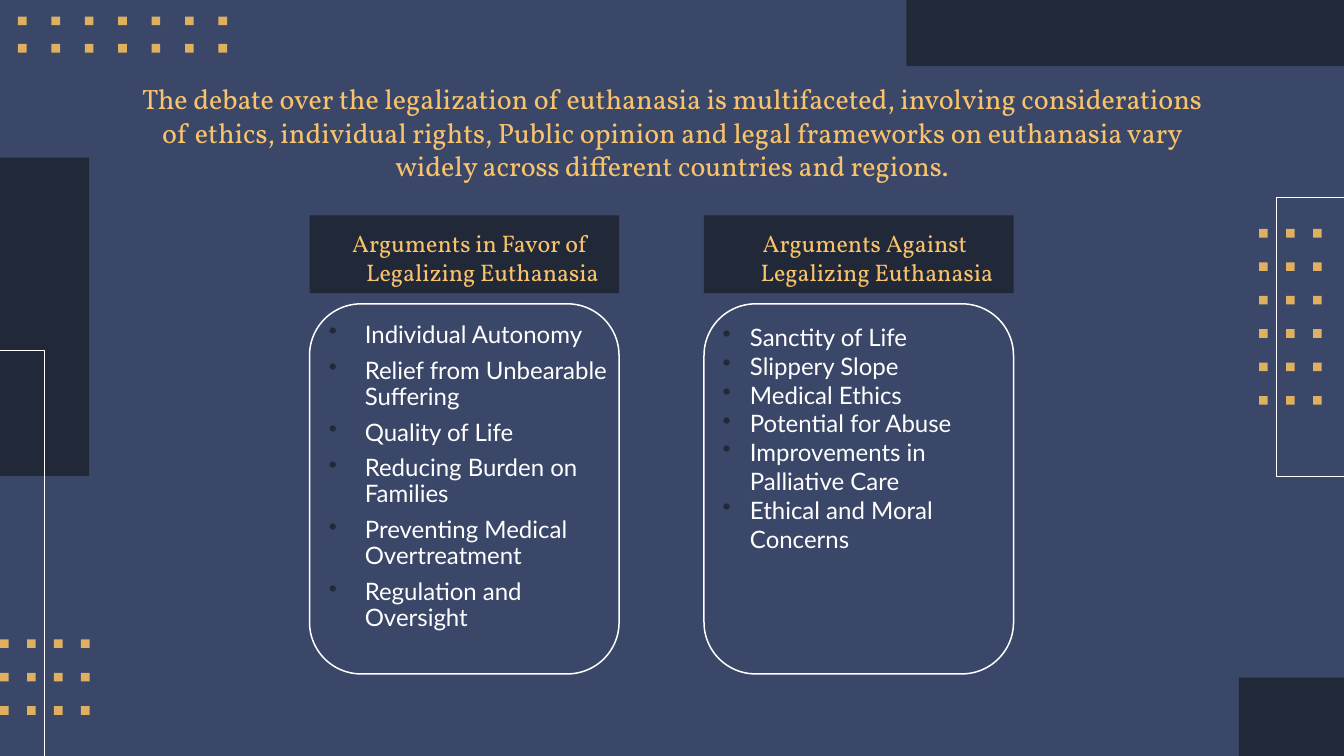
"""Build the slide that sets out arguments for and against legalizing euthanasia."""
from lxml import etree
from pptx import Presentation
from pptx import util as u
from pptx.dml.color import RGBColor
from pptx.enum import shapes, text
from pptx.oxml.ns import qn

TITLE = ("The debate over the legalization of euthanasia is multifaceted, involving "
         "considerations of ethics, individual rights, Public opinion and legal frameworks "
         "on euthanasia vary widely across different countries and regions.")
COLUMNS = [
    {"heading": "Arguments in Favor of Legalizing Euthanasia",
     "points": ["Individual Autonomy", "Relief from Unbearable Suffering", "Quality of Life",
                "Reducing Burden on Families", "Preventing Medical Overtreatment",
                "Regulation and Oversight"],
     "indent": (0.67, -0.5), "height": 4.82,
     "spacing": {"line_spacing": 0.9, "space_after": u.Pt(10)}},
    {"heading": "Arguments Against Legalizing Euthanasia",
     "points": ["Sanctity of Life", "Slippery Slope", "Medical Ethics", "Potential for Abuse",
                "Improvements in Palliative Care", "Ethical and Moral Concerns"],
     "indent": (0.54, -0.38), "height": 3.39, "spacing": {}},
]
THEME = {"back": "3A4769", "dark": "212838", "dot": "DFB05F", "gold": "F8C36A",
         "white": "FFFFFF", "serif": "Vollkorn", "sans": "Lato", "title": 28, "body": 24}

WIDTH, HEIGHT = 18.67, 10.5
PANELS = [(17.21, 9.41, 1.46, 1.09), (12.59, 0, 6.08, 0.92), (0, 2.19, 1.24, 4.42)]
OUTLINES = [[(WIDTH, 2.74), (17.73, 2.74), (17.73, 6.62), (WIDTH, 6.62)],
            [(0.62, HEIGHT), (0.62, 4.87), (0, 4.87)]]
DOT, WIDE, NARROW = 0.12, 0.464, 0.375
DOT_GRIDS = [
    {"at": (0.25, 0.23), "count": (7, 2), "step": (WIDE, 0.38)},
    {"at": (17.49, 3.18), "count": (3, 6), "step": (NARROW, WIDE)},
    {"at": (0, 8.88), "count": (4, 3), "step": (NARROW, WIDE)},
]
COLUMN_LEFT, COLUMN_STEP, COLUMN_WIDTH = 4.3, 5.48, 4.3


def color(name):
    return RGBColor.from_string(THEME[name])


def lengths(values):
    return [u.Inches(value) for value in values]


def apply(target, values):
    for name, value in values.items():
        setattr(target, name, value)


def style(shape, fill=None, line=None, weight=0.75):
    shape.shadow.inherit = False
    for part, name in ((shape.fill, fill), (shape.line.fill, line)):
        if name:
            part.solid()
            part.fore_color.rgb = color(name)
        else:
            part.background()
    if line:
        shape.line.width = u.Pt(weight)


def add_block(page, kind, frame, **look):
    shape = page.shapes.add_shape(kind, *lengths(frame))
    style(shape, **look)
    return shape


def add_outline(page, points):
    corners = [lengths(point) for point in points]
    builder = page.shapes.build_freeform(*corners[0])
    builder.add_line_segments(corners[1:], close=False)
    style(builder.convert_to_shape(), line="white")


def add_dots(page, grid):
    (left, top), (across, down), (dx, dy) = grid["at"], grid["count"], grid["step"]
    for row in range(down):
        for column in range(across):
            add_block(page, shapes.MSO_SHAPE.RECTANGLE,
                      (left + column * dx, top + row * dy, DOT, DOT), fill="dot")


def add_bullet(para):
    props = para._p.get_or_add_pPr()
    tint = etree.SubElement(props, qn("a:buClr"))
    etree.SubElement(tint, qn("a:srgbClr"), val=THEME["dark"])
    etree.SubElement(props, qn("a:buChar"), char="•")


def write(box, lines, font, size, ink, inset=0.1, anchor=text.MSO_ANCHOR.TOP,
          align=text.PP_ALIGN.LEFT, indent=None, spacing=None, bullets=False):
    frame = box.text_frame
    sides = ("margin_left", "margin_top", "margin_right", "margin_bottom")
    apply(frame, {"word_wrap": True, "vertical_anchor": anchor,
                  **dict.fromkeys(sides, u.Inches(inset))})
    for number, line in enumerate(lines):
        para = frame.add_paragraph() if number else frame.paragraphs[0]
        apply(para, {"alignment": align, **(spacing or {})})
        if indent:
            props = para._p.get_or_add_pPr()
            for name, value in zip(("marL", "indent"), lengths(indent)):
                props.set(name, str(value))
        if bullets:
            add_bullet(para)
        span = para.add_run()
        span.text = line
        apply(span.font, {"name": THEME[font], "size": u.Pt(THEME[size])})
        span.font.color.rgb = color(ink)


def add_column(page, number, column):
    left = COLUMN_LEFT + number * COLUMN_STEP
    heading = add_block(page, shapes.MSO_SHAPE.RECTANGLE,
                        (left, 2.99, COLUMN_WIDTH, 1.08), fill="dark")
    write(heading, [column["heading"]], "serif", "body", "gold", indent=(0.5, -0.33),
          anchor=text.MSO_ANCHOR.BOTTOM, align=text.PP_ALIGN.CENTER)
    points = page.shapes.add_textbox(*lengths((left, 4.38, COLUMN_WIDTH, column["height"])))
    write(points, column["points"], "sans", "body", "white", indent=column["indent"],
          spacing=column["spacing"], bullets=True)
    add_block(page, shapes.MSO_SHAPE.ROUNDED_RECTANGLE,
              (left, 4.22, COLUMN_WIDTH, 5.14), line="white", weight=1.5)


def main():
    deck = Presentation()
    apply(deck, {"slide_width": u.Inches(WIDTH), "slide_height": u.Inches(HEIGHT)})
    page = deck.slides.add_slide(deck.slide_layouts[6])
    page.background.fill.solid()
    page.background.fill.fore_color.rgb = color("back")
    for frame in PANELS:
        add_block(page, shapes.MSO_SHAPE.RECTANGLE, frame, fill="dark")
    for points in OUTLINES:
        add_outline(page, points)
    for grid in DOT_GRIDS:
        add_dots(page, grid)
    title = page.shapes.add_textbox(*lengths((1.72, 0.99, 15.23, 1.65)))
    write(title, [TITLE], "serif", "title", "gold", inset=0.14, align=text.PP_ALIGN.CENTER)
    for number, column in enumerate(COLUMNS):
        add_column(page, number, column)
    deck.save("out.pptx")


if __name__ == "__main__":
    main()
